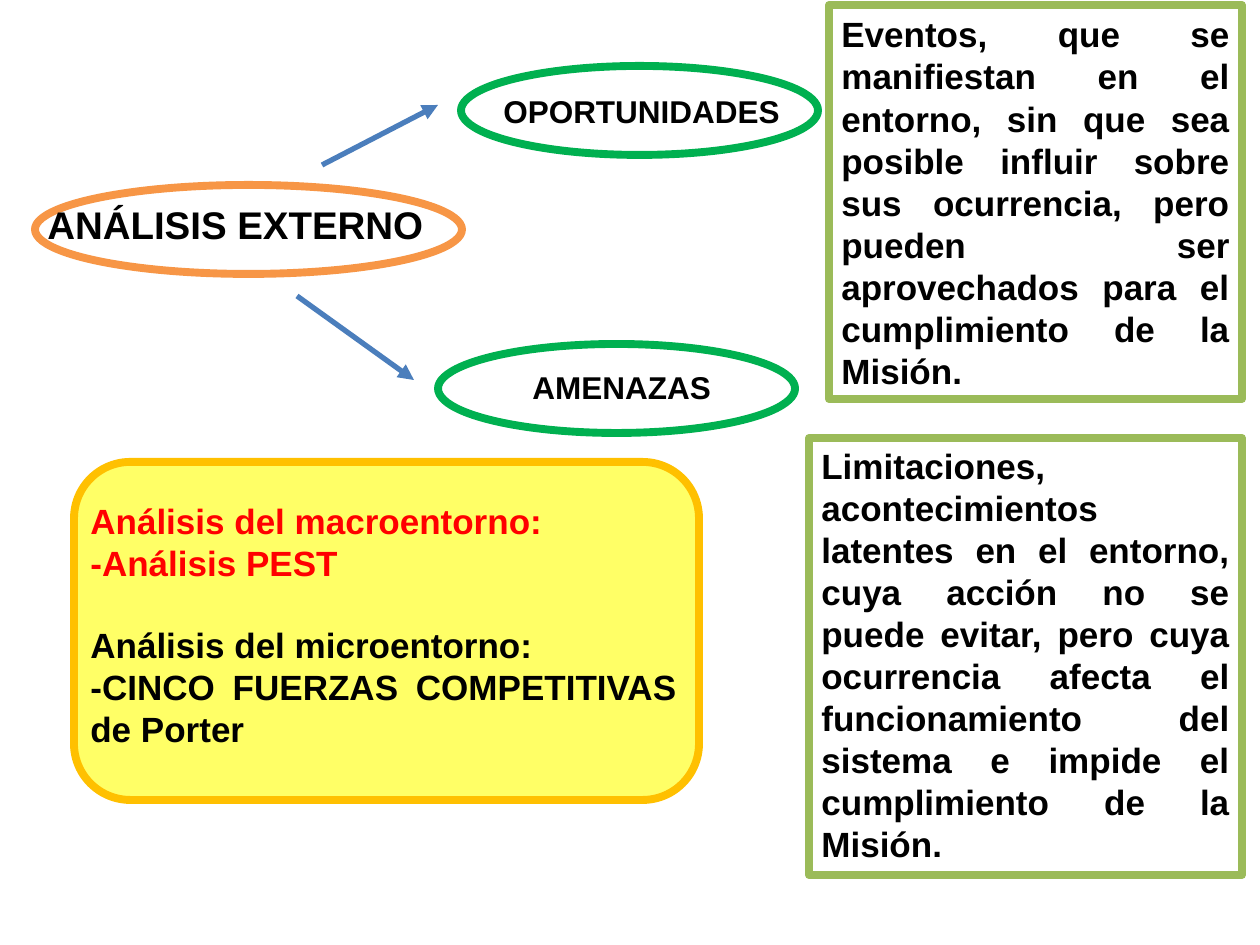
import pptx
import pptx.util
import pptx.dml.color
import pptx.enum.shapes
import pptx.enum.text
import pptx.oxml.ns
import lxml.etree

PX = 914400 / 126
COLORS = {
    "black": "000000", "white": "FFFFFF", "red": "FF0000",
    "yellow": "FFFF66", "gold": "FFC000", "green": "00B050",
    "orange": "F79646", "olive": "9BBB59", "blue": "4B7EBC",
}
SHAPE = pptx.enum.shapes.MSO_SHAPE
ALIGN = pptx.enum.text.PP_ALIGN
ANCHOR = pptx.enum.text.MSO_ANCHOR


def emu(*lengths):
    return [round(n * PX) for n in lengths]


def add_text(tf, text, size=20, color="black", align=ALIGN.JUSTIFY,
             before=0, first=True):
    p = tf.paragraphs[0] if first else tf.add_paragraph()
    p.alignment = align
    p.space_before = pptx.util.Pt(before)
    r = p.add_run()
    r.text = text
    r.font.name = "Arial"
    r.font.size = pptx.util.Pt(size)
    r.font.bold = True
    r.font.color.rgb = pptx.dml.color.RGBColor.from_string(COLORS[color])


prs = pptx.Presentation()
prs.slide_width, prs.slide_height = emu(1260, 945)
s = prs.slides.add_slide(prs.slide_layouts[6])

shapes = [
    (SHAPE.ROUNDED_RECTANGLE, (74, 462, 625, 338), "yellow", "gold", None, None),
    (SHAPE.OVAL, (438, 344, 357, 89), "white", "green", None, None),
    (SHAPE.OVAL, (461, 66, 357, 89), "white", "green", None, None),
    (SHAPE.OVAL, (35, 185, 427, 89), "white", "orange", None, None),
    (SHAPE.RECTANGLE, (829, 5, 413, 394), "white", "olive", ANCHOR.MIDDLE,
     "Eventos, que se manifiestan en el entorno, sin que sea posible influir "
     "sobre sus ocurrencia, pero pueden ser aprovechados para el cumplimiento "
     "de la Misión."),
    (SHAPE.RECTANGLE, (809, 438, 433, 437), "white", "olive", ANCHOR.TOP,
     "Limitaciones, acontecimientos latentes en el entorno, cuya acción no se "
     "puede evitar, pero cuya ocurrencia afecta el funcionamiento del sistema "
     "e impide el cumplimiento de la Misión."),
]
for kind, box, fill, line, anchor, text in shapes:
    sp = s.shapes.add_shape(kind, *emu(*box))
    sp.shadow.inherit = False
    sp.fill.solid()
    sp.fill.fore_color.rgb = pptx.dml.color.RGBColor.from_string(COLORS[fill])
    sp.line.color.rgb = pptx.dml.color.RGBColor.from_string(COLORS[line])
    sp.line.width = pptx.util.Pt(4.5)
    if text:
        sp.text_frame.word_wrap = True
        sp.text_frame.vertical_anchor = anchor
        add_text(sp.text_frame, text)

labels = [
    ("ANÁLISIS EXTERNO", (35, 195, 416, 59), 22),
    ("OPORTUNIDADES", (491, 86, 305, 50), 18),
    ("AMENAZAS", (520, 362, 205, 50), 18),
]
for text, box, size in labels:
    tf = s.shapes.add_textbox(*emu(*box)).text_frame
    tf.word_wrap = False
    add_text(tf, text, size=size, align=ALIGN.LEFT)

tf = s.shapes.add_textbox(*emu(78, 493, 611, 310)).text_frame
tf.word_wrap = True
add_text(tf, "Análisis del macroentorno:", color="red")
add_text(tf, "-Análisis PEST", color="red", first=False)
add_text(tf, "Análisis del microentorno:", before=23, first=False)
add_text(tf, "-CINCO FUERZAS COMPETITIVAS de Porter", first=False)

for ends in [(322, 165, 438, 105), (297, 296, 414, 380)]:
    arrow = s.shapes.add_connector(
        pptx.enum.shapes.MSO_CONNECTOR.STRAIGHT, *emu(*ends))
    arrow.line.color.rgb = pptx.dml.color.RGBColor.from_string(COLORS["blue"])
    arrow.line.width = pptx.util.Pt(3)
    ln = arrow.line._get_or_add_ln()
    lxml.etree.SubElement(ln, pptx.oxml.ns.qn("a:tailEnd"), type="triangle")
    lxml.etree.SubElement(arrow._element.spPr, pptx.oxml.ns.qn("a:effectLst"))

prs.save("out.pptx")
